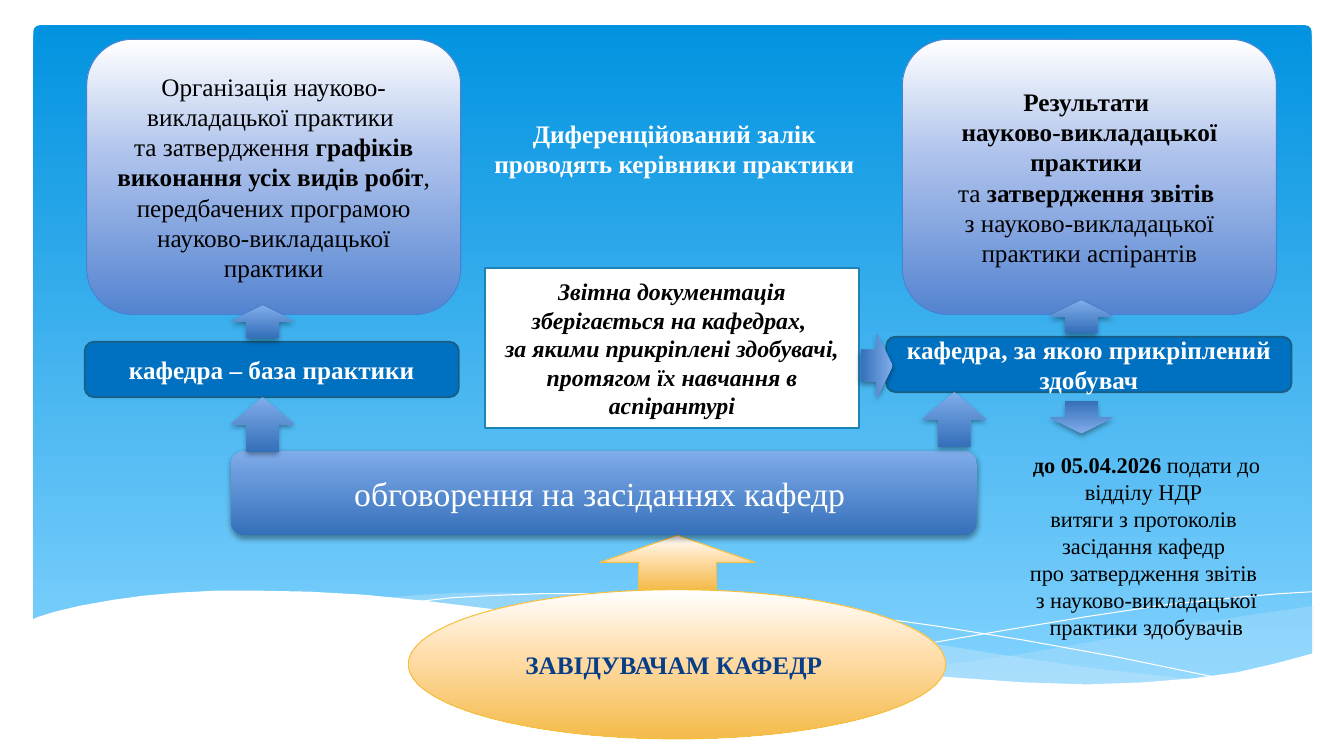
from lxml import etree
from pptx import Presentation
from pptx.dml.color import RGBColor
from pptx.enum.shapes import MSO_SHAPE
from pptx.enum.text import MSO_ANCHOR, PP_ALIGN
from pptx.oxml.ns import qn
from pptx.util import Pt

RECT = MSO_SHAPE.RECTANGLE
ROUND = MSO_SHAPE.ROUNDED_RECTANGLE
OVAL = MSO_SHAPE.OVAL
ARROW = MSO_SHAPE.UP_ARROW
CENTER = PP_ALIGN.CENTER
MIDDLE = MSO_ANCHOR.MIDDLE
TOP = MSO_ANCHOR.TOP

CELL = 9144
COLS, ROWS = 1333, 750
FONT = "Times New Roman"
HEX = {
    "white": "FFFFFF", "black": "000000", "navy": "073E87",
    "mist": "C6E7FC", "tag": "0070C0", "edge": "195F84",
    "frame": "1C83B9", "rim": "4584D3", "gold": "F5C040",
}
FADES = {
    "sky": [(0, "0293E0"), (100, "83D3FE")],
    "blue": [(0, "80ACEA"), (100, "3570BA")],
    "card": [(0, "FFFFFF"), (44, "ABC0EB"), (100, "5484D1")],
    "amber": [(0, "FFFFFF"), (44, "FFDDAA"), (100, "F4BB4A")],
}
WAVES = [
    ([(1303, 601), (1248, 609), (1190, 618), (1149, 625), (1075, 638), (1006, 650),
      (942, 659), (883, 667), (922, 671), (959, 674), (994, 676), (1027, 679),
      (1072, 680), (1114, 679), (1152, 677), (1187, 674), (1219, 669), (1249, 663),
      (1285, 654), (1303, 649)], 29),
    ([(1192, 675), (1156, 671), (1077, 662), (990, 649), (892, 633), (840, 624),
      (779, 613), (722, 605), (670, 598), (620, 593), (561, 589), (507, 588),
      (459, 588), (418, 590), (382, 593), (431, 598), (484, 605), (540, 613),
      (600, 624), (707, 642), (803, 657), (888, 668), (964, 676), (1032, 679),
      (1092, 680), (1145, 679)], 40),
]
LINES = [
    [(413, 597), (448, 593), (485, 591), (536, 589), (601, 589), (653, 592),
     (711, 596), (776, 602), (849, 610), (928, 621), (1015, 635), (1109, 652),
     (1211, 673)],
    [(819, 659), (871, 648), (928, 637), (998, 625), (1076, 612), (1156, 600),
     (1195, 596), (1233, 592), (1269, 589), (1302, 587)],
]
SHORE = [
    (1303, 648), (1266, 658), (1227, 667), (1183, 673), (1134, 677), (1078, 679),
    (1015, 677), (944, 672), (891, 667), (834, 660), (772, 651), (706, 641),
    (634, 629), (558, 615), (486, 604), (421, 596), (361, 590), (307, 587),
    (258, 586), (214, 586), (176, 588), (142, 591), (113, 595), (79, 601),
    (54, 607), (38, 612), (31, 615), (31, 731), (1303, 731),
]


def tint(name):
    return RGBColor.from_string(HEX[name])


def fade(shape, name):
    shape.fill.gradient()
    shape.fill.gradient_angle = 270
    stops = shape._element.spPr.find(qn("a:gradFill")).find(qn("a:gsLst"))
    for stop in list(stops):
        stops.remove(stop)
    for pos, color in FADES[name]:
        stop = etree.SubElement(stops, qn("a:gs"), pos=str(pos * 1000))
        etree.SubElement(stop, qn("a:srgbClr"), val=color)


def shade(shape):
    effects = shape._element.spPr.find(qn("a:effectLst"))
    outer = etree.SubElement(effects, qn("a:outerShdw"), blurRad="50800",
                             dist="25400", dir="5400000", rotWithShape="0")
    color = etree.SubElement(outer, qn("a:srgbClr"), val=HEX["black"])
    etree.SubElement(color, qn("a:alpha"), val="38000")


def draw(slide, kind, box, fill, line=None, width=0.75):
    shape = slide.shapes.add_shape(kind, *(round(n * CELL) for n in box))
    shape.shadow.inherit = False
    if fill in FADES:
        fade(shape, fill)
    else:
        shape.fill.solid()
        shape.fill.fore_color.rgb = tint(fill)
    if line:
        shape.line.color.rgb = tint(line)
        shape.line.width = Pt(width)
    else:
        shape.line.fill.background()
    return shape


def write(shape, paras, size, color, bold=False, italic=False, anchor=MIDDLE, wrap=True):
    frame = shape.text_frame
    frame.word_wrap = wrap
    frame.vertical_anchor = anchor
    for i, text in enumerate(paras):
        para = frame.paragraphs[0] if i == 0 else frame.add_paragraph()
        para.alignment = CENTER
        para.font.name = FONT
        para.font.size = Pt(size)
        para.font.color.rgb = tint(color)
        para.font.bold = bold
        para.font.italic = italic
        for j, part in enumerate(text.split("*")):
            for k, row in enumerate(part.split("\n")):
                if k:
                    para.add_line_break()
                if row:
                    run = para.add_run()
                    run.text = row
                    if j % 2:
                        run.font.bold = True


def note(slide, box, paras, size, color, **style):
    shape = slide.shapes.add_textbox(*(n * CELL for n in box))
    write(shape, paras, size, color, anchor=TOP, **style)


def arrow(slide, x, y, high=32, turn=0):
    shape = draw(slide, ARROW, (x, y, 63, high), "blue")
    shape.rotation = turn
    shade(shape)


def trace(slide, x, y, points, close):
    pen = slide.shapes.build_freeform(*points[0], scale=CELL)
    pen.add_line_segments(points[1:], close=close)
    shape = pen.convert_to_shape(x * CELL, y * CELL)
    shape.shadow.inherit = False
    return shape


def wave(slide, x, y, points, color, alpha=100):
    shape = trace(slide, x, y, points, True)
    shape.line.fill.background()
    shape.fill.solid()
    shape.fill.fore_color.rgb = tint(color)
    if alpha < 100:
        node = shape._element.spPr.find(qn("a:solidFill"))[0]
        etree.SubElement(node, qn("a:alpha"), val=str(alpha * 1000))


def scene(slide, box):
    x, y, w, h = box
    sky = draw(slide, ROUND, (x + 33, y + 25, w - 65, h - 90), "sky")
    sky.adjustments[0] = 0.01
    for points, alpha in WAVES:
        wave(slide, x, y, points, "mist", alpha)
    for points in LINES:
        shape = trace(slide, x, y, points, False)
        shape.fill.background()
        shape.line.color.rgb = tint("white")
        shape.line.width = Pt(0)
    wave(slide, x, y, SHORE, "white")


def base(slide, box):
    x, y, w, h = box
    draw(slide, ARROW, (x + 366, y + 84, 154, 54), "amber", "gold")
    bar = draw(slide, ROUND, (x, y, w, 84), "blue")
    shade(bar)
    write(bar, ["обговорення на засіданнях кафедр "], 24, "white")
    head = draw(slide, OVAL, (x + 176, y + 138, 533, h - 138), "amber", "gold")
    write(head, ["ЗАВІДУВАЧАМ КАФЕДР "], 18, "navy", bold=True)


def side(slide, box, paras, tag, place, lift, feed):
    x, y, w, h = box
    dx, dy, wide = place
    card = draw(slide, ROUND, box, "card", "rim")
    write(card, paras, 18, "black")
    label = draw(slide, ROUND, (x + dx, y + h + dy, wide, 55), "tag", "edge", 1.25)
    write(label, [tag], 18, "white", bold=True)
    arrow(slide, x + lift, y + h + dy - 36)
    arrow(slide, x + feed, y + h + dy + 55, 54)


def core(slide, box):
    x, y, w, h = box
    note(slide, (x - 6, y, 394, 71),
         ["Диференційований залік ", "проводять керівники практики "],
         18, "white", bold=True, wrap=False)
    panel = draw(slide, RECT, (x, y + h - 159, w, 159), "white", "frame", 1.25)
    write(panel, ["Звітна документація зберігається на кафедрах, ",
                  "за якими прикріплені здобувачі, протягом їх навчання в аспірантурі"],
          17, "black", bold=True, italic=True)
    arrow(slide, x + w - 14, y + h - 78, turn=90)


def due(slide, box):
    x, y, w, h = box
    note(slide, (x, y + 45, w, h - 45),
         ["*до 05.04.2026* подати до відділу НДР ", "витяги з протоколів ",
          "засідання кафедр ", "про затвердження звітів ",
          "з науково-викладацької практики здобувачів"], 16, "black")
    arrow(slide, x + 63, y, turn=180)


def main():
    deck = Presentation()
    deck.slide_width = COLS * CELL
    deck.slide_height = ROWS * CELL
    slide = deck.slides.add_slide(deck.slide_layouts[6])
    scene(slide, (0, 0, COLS, ROWS))
    base(slide, (229, 447, 740, 286))
    side(slide, (86, 39, 371, 273),
         ["Організація науково-викладацької практики ",
          "та затвердження *графіків виконання усіх видів робіт*, "
          "передбачених програмою науково-викладацької практики"],
         "кафедра – база практики", (-2, 27, 371), 143, 143)
    side(slide, (895, 39, 371, 273),
         ["*Результати *", "*науково-викладацької практики *",
          "та *затвердження звітів \n*з науково-викладацької практики аспірантів"],
         "кафедра, за якою прикріплений здобувач", (-16, 22, 402), 146, 20)
    core(slide, (481, 112, 371, 313))
    due(slide, (978, 398, 318, 242))
    deck.save("out.pptx")


if __name__ == "__main__":
    main()
